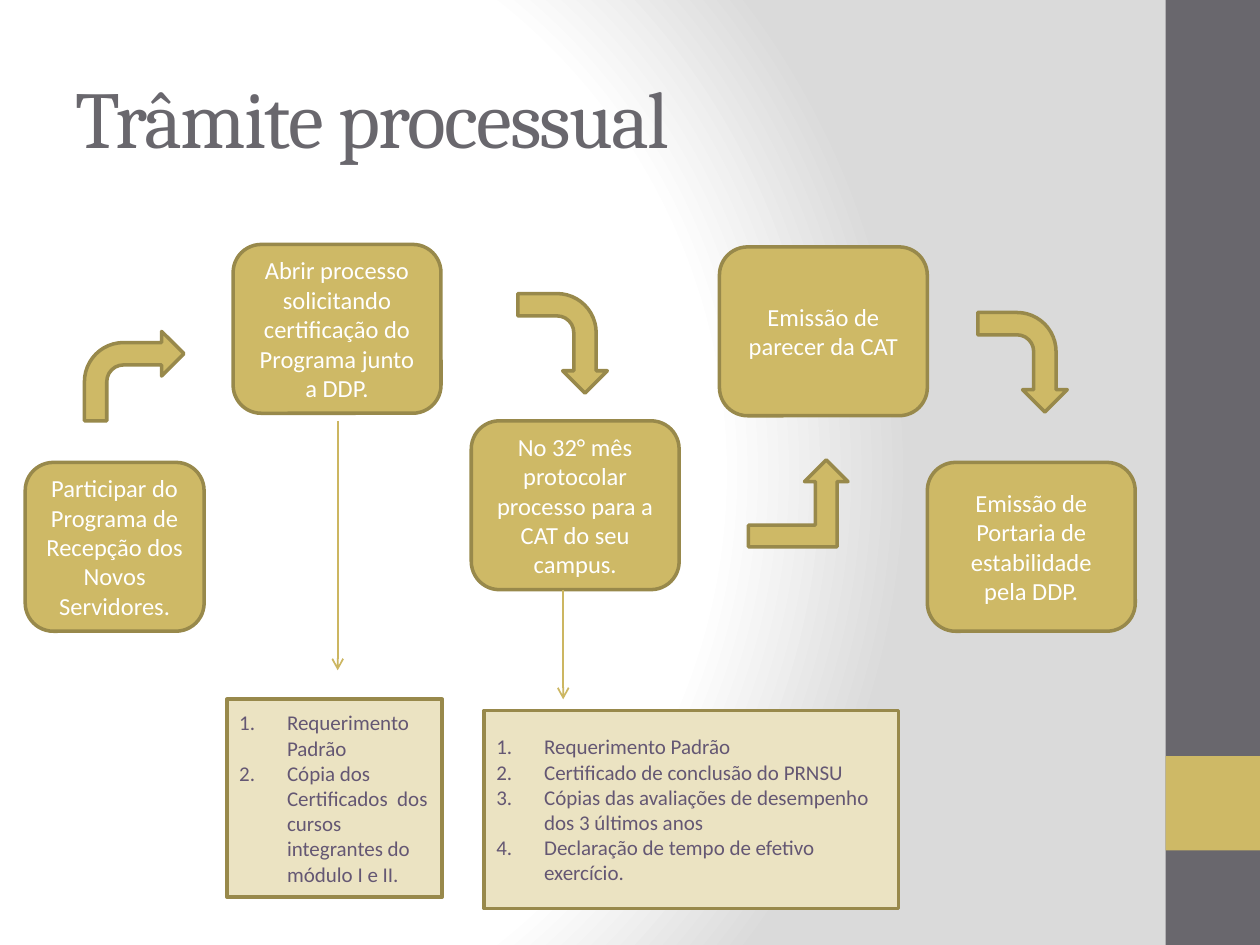
"""Build the slide that shows the steps of the tenure process as a flow of cards, arrows and lists."""
from lxml import etree
from pptx import Presentation
from pptx import util as u
from pptx.dml.color import RGBColor
from pptx.enum import shapes, text
from pptx.oxml import parse_xml
from pptx.oxml.ns import nsdecls, qn

TITLE = "Trâmite processual"
GOLD, OUTLINE, CREAM, GREY = "CEB966", "98894B", "EBE3C2", "69676D"
CONNECTOR, WHITE, LIST_TEXT = "CCB661", "FFFFFF", "645773"
WIDTH, HEIGHT, SIDEBAR = 10, 7.5, 0.75
CARD_WIDTH, CARD_HEIGHT, LIST_HEIGHT = 1.65, 1.34, 1.57
INDENT = 0.38

SIDE_BLOCKS = [(0, HEIGHT, GREY), (HEIGHT * 0.8, SIDEBAR, GOLD)]
STEPS = [
    (0.2, 3.67, 1.42, "Participar do Programa de Recepção dos Novos Servidores."),
    (1.85, 1.94, CARD_WIDTH, "Abrir processo solicitando certificação do Programa junto a DDP."),
    (3.74, 3.34, CARD_WIDTH, "No 32° mês protocolar processo para a CAT do seu campus."),
    (5.71, 1.96, CARD_WIDTH, "Emissão de parecer da CAT"),
    (7.36, 3.67, CARD_WIDTH, "Emissão de Portaria de estabilidade pela DDP."),
]
BENDS = [
    ("BENT_ARROW", 0.67, 2.63, 0.71, 0),
    ("BENT_ARROW", 4.07, 2.37, 0.71, 90),
    ("BENT_UP_ARROW", 5.94, 3.65, 0.69, 0),
    ("BENT_ARROW", 7.72, 2.52, 0.71, 90),
]
DOWN_LINES = [(2.68, 3.34, 5.32), (4.47, 4.68, 5.55)]
DOCUMENTS = [
    (1.8, 5.55, 1.71, [
        "Requerimento Padrão",
        "Cópia dos Certificados  dos cursos integrantes do módulo I e II.",
    ]),
    (3.84, 5.64, 3.29, [
        "Requerimento Padrão",
        "Certificado de conclusão do PRNSU",
        "Cópias das avaliações de desempenho dos 3 últimos anos",
        "Declaração de tempo de efetivo exercício.",
    ]),
]


def color(value):
    return RGBColor.from_string(value)


def write(shape, lines, size, tint, align, font="Calibri"):
    frame = shape.text_frame
    frame.text = "\n".join(lines)
    frame.word_wrap = True
    frame.vertical_anchor = text.MSO_ANCHOR.MIDDLE
    for paragraph in frame.paragraphs:
        paragraph.alignment = align
        for run in paragraph.runs:
            for name, value in {"size": u.Pt(size), "name": font}.items():
                setattr(run.font, name, value)
            run.font.color.rgb = color(tint)


def add_block(slide, kind, box, fill, line=OUTLINE):
    shape = slide.shapes.add_shape(getattr(shapes.MSO_SHAPE, kind), *map(u.Inches, box))
    shape.shadow.inherit = False
    shape.fill.solid()
    shape.fill.fore_color.rgb = color(fill)
    if line:
        shape.line.color.rgb = color(line)
        shape.line.width = u.Pt(2)
    else:
        shape.line.fill.background()
    return shape


def number(paragraph):
    properties = paragraph._p.get_or_add_pPr()
    properties.set("marL", str(u.Inches(INDENT)))
    properties.set("indent", str(-u.Inches(INDENT)))
    etree.SubElement(properties, qn("a:buAutoNum"), type="arabicPeriod")


def add_down_line(slide, x, top, bottom):
    line = slide.shapes.add_connector(
        shapes.MSO_CONNECTOR.STRAIGHT, *map(u.Inches, (x, top, x, bottom)))
    line.line.color.rgb = color(CONNECTOR)
    line.line.width = u.Pt(1)
    etree.SubElement(line.line._get_or_add_ln(), qn("a:tailEnd"), type="arrow")
    etree.SubElement(line._element.spPr, qn("a:effectLst"))


def paint_background(slide):
    slide.background.fill.gradient()
    old = slide.element.find(".//" + qn("a:gradFill"))
    stops = "".join(
        f'<a:gs pos="{place * 1000}"><a:srgbClr val="{value}"/></a:gs>'
        for place, value in [(0, WHITE), (75, WHITE), (100, "DADADA")])
    old.getparent().replace(old, parse_xml(
        f'<a:gradFill {nsdecls("a")} rotWithShape="1"><a:gsLst>{stops}</a:gsLst>'
        '<a:path path="circle"><a:fillToRect l="20000" t="50000" r="100000" b="50000"/>'
        '</a:path></a:gradFill>'))


def add_title(slide):
    title = slide.shapes.title
    box = {"left": 0.5, "top": 0.3, "width": 8.33, "height": 1.25}
    for name, value in box.items():
        setattr(title, name, u.Inches(value))
    write(title, [TITLE], 46, GREY, text.PP_ALIGN.LEFT, "Cambria")
    title.text_frame.auto_size = text.MSO_AUTO_SIZE.NONE
    title.text_frame.paragraphs[0].runs[0].font._element.set("spc", "-100")


def main():
    presentation = Presentation()
    presentation.slide_width, presentation.slide_height = u.Inches(WIDTH), u.Inches(HEIGHT)
    slide = presentation.slides.add_slide(presentation.slide_layouts[5])
    paint_background(slide)
    for top, height, fill in SIDE_BLOCKS:
        add_block(slide, "RECTANGLE", (WIDTH - SIDEBAR, top, SIDEBAR, height), fill, None)
    add_title(slide)
    for left, top, width, label in STEPS:
        card = add_block(slide, "ROUNDED_RECTANGLE", (left, top, width, CARD_HEIGHT), GOLD)
        write(card, [label], 14, WHITE, text.PP_ALIGN.CENTER)
    for kind, left, top, height, rotation in BENDS:
        add_block(slide, kind, (left, top, 0.79, height), GOLD).rotation = rotation
    for ends in DOWN_LINES:
        add_down_line(slide, *ends)
    for left, top, width, items in DOCUMENTS:
        panel = add_block(slide, "RECTANGLE", (left, top, width, LIST_HEIGHT), CREAM)
        write(panel, items, 12, LIST_TEXT, text.PP_ALIGN.LEFT)
        for paragraph in panel.text_frame.paragraphs:
            number(paragraph)
    presentation.save("out.pptx")


if __name__ == "__main__":
    main()
